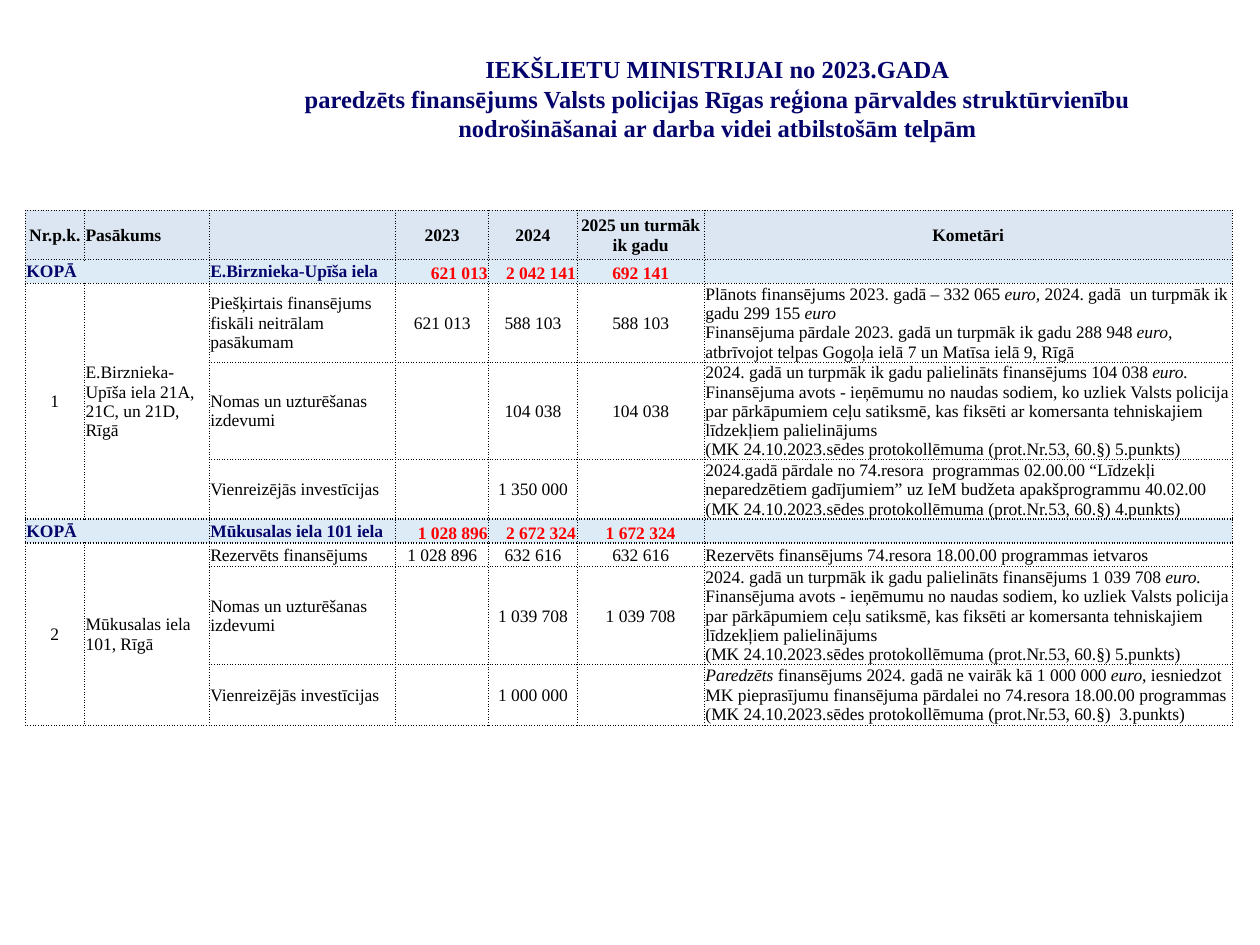
from lxml import etree
from pptx import Presentation
from pptx.dml.color import RGBColor
from pptx.enum.text import MSO_ANCHOR, MSO_AUTO_SIZE, PP_ALIGN
from pptx.oxml.ns import qn
from pptx.util import Inches, Pt

LEFT, CENTER, RIGHT = PP_ALIGN.LEFT, PP_ALIGN.CENTER, PP_ALIGN.RIGHT
TOP, MIDDLE, BOTTOM = MSO_ANCHOR.TOP, MSO_ANCHOR.MIDDLE, MSO_ANCHOR.BOTTOM
FACE = "Times New Roman"
NAVY, BLACK, RED = "04046C", "000000", "FF0000"
HEAD_FILL, SUM_FILL = "DCE6F2", "DDEBF7"

TITLE = """IEKŠLIETU MINISTRIJAI no 2023.GADA
paredzēts finansējums Valsts policijas Rīgas reģiona pārvaldes struktūrvienību
nodrošināšanai ar darba videi atbilstošām telpām"""

# In cell text, *...* is italic, \v breaks a line and \n starts a paragraph.
PROTOCOL = "(MK 24.10.2023.sēdes protokollēmuma (prot.Nr.53, 60.§) "
RENT = ("2024. gadā un turpmāk ik gadu palielināts finansējums {} *euro.*\v"
        "Finansējuma avots - ieņēmumu no naudas sodiem, ko uzliek Valsts policija "
        "par pārkāpumiem ceļu satiksmē, kas fiksēti ar komersanta tehniskajiem "
        "līdzekļiem palielinājums\n" + PROTOCOL + "5.punkts)")

WIDTHS = [0.47, 0.99, 1.48, 0.74, 0.7, 1.01, 4.19]
HEIGHTS = [0.39, 0.19, 0.55, 0.57, 0.37, 0.19, 0.19, 0.55, 0.48]
SUMS = (1, 5)
GROUP = 3  # item rows under each sum row
ROWS = [
    ["Nr.p.k.", "Pasākums", "", "2023", "2024", "2025 un turmāk ik gadu", "Kometāri"],
    ["KOPĀ", "", "E.Birznieka-Upīša iela", "621 013", "2 042 141", "692 141", ""],
    ["1", "E.Birznieka-Upīša iela 21A, 21C, un 21D, Rīgā",
     "Piešķirtais finansējums fiskāli neitrālam pasākumam",
     "621 013", "588 103", "588 103",
     "Plānots finansējums 2023. gadā – 332 065 *euro, *2024. gadā  un turpmāk "
     "ik gadu 299 155 *euro*\vFinansējuma pārdale 2023. gadā un turpmāk ik gadu "
     "288 948 *euro,* atbrīvojot telpas Gogoļa ielā 7 un Matīsa ielā 9, Rīgā"],
    ["", "", "Nomas un uzturēšanas izdevumi", "", "104 038", "104 038",
     RENT.format("104 038")],
    ["", "", "Vienreizējās investīcijas", "", "1 350 000", "",
     "2024.gadā pārdale no 74.resora  programmas 02.00.00 “Līdzekļi neparedzētiem "
     "gadījumiem” uz IeM budžeta apakšprogrammu 40.02.00\n" + PROTOCOL + "4.punkts)"],
    ["KOPĀ", "", "Mūkusalas iela 101 iela", "1 028 896", "2 672 324", "1 672 324", ""],
    ["2", "Mūkusalas iela 101, Rīgā", "Rezervēts finansējums",
     "1 028 896", "632 616", "632 616",
     "Rezervēts finansējums 74.resora 18.00.00 programmas ietvaros"],
    ["", "", "Nomas un uzturēšanas izdevumi", "", "1 039 708", "1 039 708",
     RENT.format("1 039 708")],
    ["", "", "Vienreizējās investīcijas", "", "1 000 000", "",
     "*Paredzēts* finansējums 2024. gadā ne vairāk kā 1 000 000 *euro*, iesniedzot "
     "MK pieprasījumu finansējuma pārdalei no 74.resora 18.00.00 programmas\n"
     + PROTOCOL + " 3.punkts)"],
]


def color(code):
    return RGBColor.from_string(code)


def style(font, size, code, bold):
    font.name, font.size, font.bold = FACE, Pt(size), bold
    font.color.rgb = color(code)


def write(cell, text, align, code, bold):
    """Fill a cell with marked-up text; blank ends and breaks keep the size."""
    frame = cell.text_frame
    for n, part in enumerate(text.split("\n")):
        para = frame.add_paragraph() if n else frame.paragraphs[0]
        para.alignment = align
        for k, line in enumerate(part.split("\v")):
            if k:
                para.add_line_break()
            for i, piece in enumerate(line.split("*")):
                if piece:
                    run = para.add_run()
                    run.text = piece
                    style(run.font, 10, code, bold)
                    run.font.italic = i % 2 == 1
        for gap in para._p.findall(qn("a:br")):
            etree.SubElement(gap, qn("a:rPr"), sz="1000")
        etree.SubElement(para._p, qn("a:endParaRPr"), sz="1000")


def border(cell, side, strong):
    line = etree.SubElement(cell._tc.get_or_add_tcPr(), qn("a:ln" + side),
                            w=str(Pt(1 if strong else 0.5)))
    fill = etree.SubElement(line, qn("a:solidFill"))
    etree.SubElement(fill, qn("a:srgbClr"), val=BLACK)
    etree.SubElement(line, qn("a:prstDash"), val="sysDot" if strong else "dot")


def look(row, col):
    """Return alignment, anchor, text colour, boldness and fill of a cell."""
    if row == 0:
        return LEFT if col == 1 else CENTER, MIDDLE, BLACK, True, HEAD_FILL
    if row in SUMS:
        if col < 3:
            return LEFT, MIDDLE, NAVY, True, SUM_FILL
        return CENTER if col == 5 else RIGHT, BOTTOM, RED, True, SUM_FILL
    return LEFT if col in (1, 2, 6) else CENTER, MIDDLE, BLACK, False, None


def add_title(slide):
    title = slide.shapes.title
    title.left, title.top = Inches(1.62), Inches(0.38)
    title.width, title.height = Inches(8.15), Inches(0.94)
    frame = title.text_frame
    frame.text = TITLE
    frame.word_wrap, frame.auto_size = True, MSO_AUTO_SIZE.NONE
    frame.vertical_anchor = TOP
    for para in frame.paragraphs:
        para.alignment = CENTER
        style(para.runs[0].font, 14, NAVY, True)


def add_budget(slide):
    table = slide.shapes.add_table(
        len(ROWS), len(WIDTHS), Inches(0.2), Inches(1.67),
        Inches(sum(WIDTHS)), Inches(sum(HEIGHTS))).table
    table.first_row = table.horz_banding = False
    for col, width in zip(table.columns, WIDTHS):
        col.width = Inches(width)
    for row, height in zip(table.rows, HEIGHTS):
        row.height = Inches(height)

    strong = {edge for r in SUMS for edge in (r, r + 1)}
    for r, row in enumerate(ROWS):
        for c, text in enumerate(row):
            cell = table.cell(r, c)
            align, anchor, code, bold, fill = look(r, c)
            cell.margin_left = cell.margin_right = cell.margin_top = Inches(0.01)
            cell.margin_bottom = 0
            cell.vertical_anchor = anchor
            for side, edge in (("L", None), ("R", None), ("T", r), ("B", r + 1)):
                border(cell, side, edge in strong)
            if fill:
                cell.fill.solid()
                cell.fill.fore_color.rgb = color(fill)
            else:
                cell.fill.background()
            write(cell, text, align, code, bold)

    for r in SUMS:
        table.cell(r, 0).merge(table.cell(r, 1))
        for c in (0, 1):
            table.cell(r + 1, c).merge(table.cell(r + GROUP, c))


def main():
    deck = Presentation()
    deck.slide_width, deck.slide_height = Inches(10), Inches(7.5)
    slide = deck.slides.add_slide(deck.slide_layouts[5])
    add_title(slide)
    add_budget(slide)
    deck.save("out.pptx")


if __name__ == "__main__":
    main()
